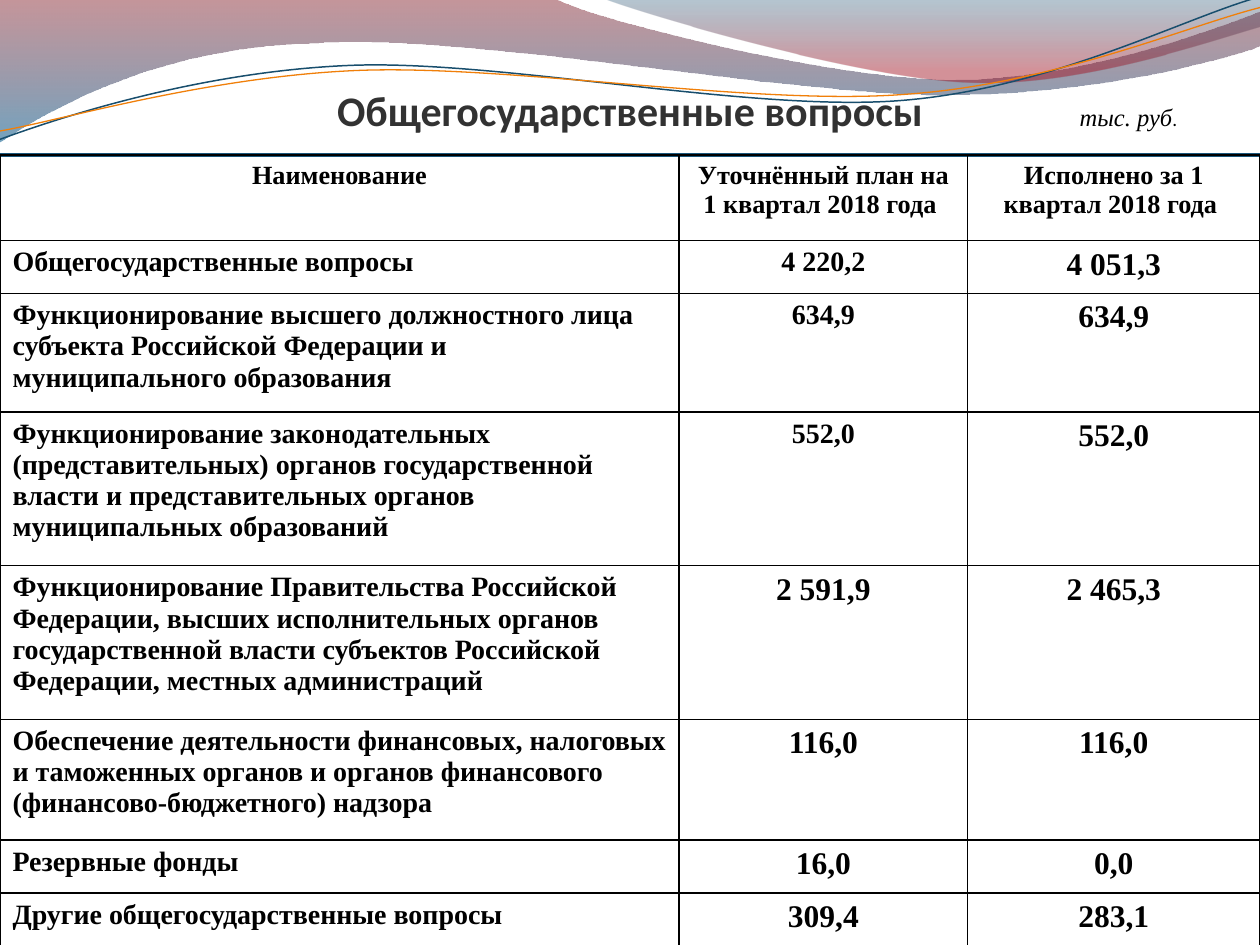
from lxml import etree
from pptx import Presentation
from pptx.dml.color import RGBColor
from pptx.enum.shapes import MSO_CONNECTOR
from pptx.enum.text import MSO_ANCHOR, PP_ALIGN
from pptx.oxml.ns import qn
from pptx.util import Inches, Pt

LEFT, CENTER = PP_ALIGN.LEFT, PP_ALIGN.CENTER
BOTTOM = MSO_ANCHOR.BOTTOM
STRAIGHT = MSO_CONNECTOR.STRAIGHT
TITLE_ONLY = 5

COLORS = {
    "text": "000000", "title": "323232", "red": "7E1621", "blue": "005689",
    "navy": "094467", "crimson": "A10F1F", "wave": "184E6D",
    "orange": "F07F09", "rule": "1B587C",
}

ROWS = [
    ("Наименование", "Уточнённый план на 1 квартал 2018 года ",
     "Исполнено за 1 квартал 2018 года "),
    ("Общегосударственные вопросы", "4 220,2", "4 051,3"),
    ("Функционирование высшего должностного лица субъекта Российской "
     "Федерации и муниципального образования", "634,9", "634,9"),
    ("Функционирование законодательных (представительных) органов "
     "государственной власти и представительных органов муниципальных "
     "образований", "552,0", "552,0"),
    ("Функционирование Правительства Российской Федерации, высших "
     "исполнительных органов государственной власти субъектов Российской "
     "Федерации, местных администраций", "2 591,9", "2 465,3"),
    ("Обеспечение деятельности финансовых, налоговых и таможенных органов "
     "и органов финансового (финансово-бюджетного) надзора",
     "116,0", "116,0"),
    ("Резервные фонды", "16,0", "0,0"),
    ("Другие общегосударственные вопросы", "309,4", "283,1"),
]
WIDTHS = [5.39, 2.29, 2.32]
HEIGHTS = [0.68, 0.42, 0.94, 1.22, 1.22, 0.96, 0.42, 0.42]


def rgb(name):
    return RGBColor.from_string(COLORS[name])


def add(parent, tag, **attrs):
    return etree.SubElement(parent, qn(tag), attrs)


class Deck:
    serif, sans = "Times New Roman", "Calibri"

    def __init__(self):
        self.prs = Presentation()
        self.prs.slide_width, self.prs.slide_height = Inches(10), Inches(7.5)
        self.slide = self.prs.slides.add_slide(
            self.prs.slide_layouts[TITLE_ONLY])
        self.shapes = self.slide.shapes

    def style(self, run, size, font, color="text", bold=False, italic=False):
        run.font.size, run.font.name = Pt(size), font
        run.font.bold, run.font.italic = bold, italic
        run.font.color.rgb = rgb(color)

    def outline(self, steps, close):
        """Draw a start, then lines (2 numbers) and Bezier curves (6)."""
        nodes = [(Inches(step[i]), Inches(step[i + 1]))
                 for step in steps for i in range(0, len(step), 2)]
        pen = self.shapes.build_freeform(*nodes[0])
        pen.add_line_segments(nodes[1:], close=close)
        shape = pen.convert_to_shape()
        shape.shadow.inherit = False
        # Join each run of three nodes into one curve
        lines = iter(list(shape.element.spPr.iter(qn("a:lnTo"))))
        for step in steps[1:]:
            first = next(lines)
            if len(step) == 6:
                curve = etree.Element(qn("a:cubicBezTo"))
                first.addprevious(curve)
                for line in (first, next(lines), next(lines)):
                    curve.append(line[0])
                    line.getparent().remove(line)
        return shape

    def band(self, steps, stops):
        shape = self.outline(steps, True)
        shape.line.fill.background()
        shape.fill.gradient()
        shape.fill.gradient_angle = 270
        for stop, (place, color, _) in zip(shape.fill.gradient_stops, stops):
            stop.position, stop.color.rgb = place, rgb(color)
        marks = shape.element.spPr.iter(qn("a:srgbClr"))
        for mark, (_, _, alpha) in zip(marks, stops):
            add(mark, "a:alpha", val=str(alpha * 1000))

    def wave(self, steps, color, width):
        shape = self.outline(steps, False)
        shape.fill.background()
        shape.line.color.rgb, shape.line.width = rgb(color), Pt(width)

    def rule(self, top):
        line = self.shapes.add_connector(
            STRAIGHT, Inches(10), Inches(top), 0, Inches(top))
        line.line.color.rgb, line.line.width = rgb("rule"), Pt(2)
        add(line.element.spPr, "a:effectLst")

    def border(self, cell):
        props = cell._tc.get_or_add_tcPr()
        for side in ("a:lnL", "a:lnR", "a:lnT", "a:lnB"):
            edge = add(props, side, w=str(Pt(1)))
            add(add(edge, "a:solidFill"), "a:srgbClr", val=COLORS["text"])

    def table(self, top, rows):
        table = self.shapes.add_table(
            len(rows), len(WIDTHS), 0, Inches(top),
            Inches(sum(WIDTHS)), Inches(sum(HEIGHTS))).table
        table.first_row = table.horz_banding = False
        for col, width in zip(table.columns, WIDTHS):
            col.width = Inches(width)
        for r, texts in enumerate(rows):
            table.rows[r].height = Inches(HEIGHTS[r])
            for c, text in enumerate(texts):
                cell = table.cell(r, c)
                self.border(cell)
                cell.fill.background()
                para = cell.text_frame.paragraphs[0]
                para.text = text
                para.alignment = CENTER if r == 0 or c else LEFT
                if r == 0:
                    size = 15
                else:
                    size = 16 if c == 0 or (c == 1 and r < 4) else 18
                self.style(para.runs[0], size, self.serif, bold=True)

    def unit(self, text, left, top, width, height):
        frame = self.shapes.add_textbox(
            *map(Inches, (left, top, width, height))).text_frame
        frame.word_wrap = True
        para = frame.paragraphs[0]
        para.text = text
        self.style(para.runs[0], 14, self.serif, italic=True)
        dot = para.add_run()
        dot.text = "."
        self.style(dot, 11, self.sans)

    def title(self, text, left, top, width, height):
        title = self.shapes.title
        title.left, title.top = Inches(left), Inches(top)
        title.width, title.height = Inches(width), Inches(height)
        frame = title.text_frame
        frame.text = text
        frame.vertical_anchor, frame.word_wrap = BOTTOM, True
        frame.margin_left = frame.margin_right = frame.margin_bottom = 0
        frame.margin_top = Inches(0.05)
        para = frame.paragraphs[0]
        para.alignment = CENTER
        self.style(para.runs[0], 24, self.sans, "title", bold=True)
        title.element.getparent().append(title.element)  # bring to front


def main():
    deck = Deck()

    # Header bands
    deck.band([(0, 0), (4.4, -0.01), (4.76, 0.17, 6.64, 0.63, 7.58, 0.63),
               (8.53, 0.63, 9.58, 0.26, 10, 0.09), (10.01, 0.36),
               (9.83, 0.44, 8.7, 0.76, 7.46, 0.75),
               (6.22, 0.75, 3.82, 0.28, 2.57, 0.34),
               (1.29, 0.36, 0.46, 0.83, -0.01, 1.13)],
              [(0, "red", 45), (1, "blue", 55)])
    deck.band([(4.79, -0.01), (5.09, 0.11, 6.82, 0.62, 7.69, 0.65),
               (8.56, 0.69, 9.61, 0.32, 10, 0.21), (10, 0)],
              [(0, "navy", 30), (0.8, "crimson", 45)])

    # Thin waves
    deck.wave([(-0.01, 1.11), (0.48, 0.93, 1.58, 0.57, 2.77, 0.52),
               (3.95, 0.47, 5.93, 0.89, 7.13, 0.8),
               (8.33, 0.71, 9.38, 0.15, 9.98, -0.02)], "wave", 0.85)
    deck.wave([(0, 1.04), (0.47, 0.96, 1.64, 0.61, 2.83, 0.56),
               (4.03, 0.51, 5.97, 0.84, 7.17, 0.75),
               (8.36, 0.67, 9.41, 0.21, 10, 0.06)], "orange", 0.75)

    # Rule, table and headings
    deck.rule(1.23)
    deck.table(1.23, ROWS)
    deck.unit("тыс. руб", 8.47, 0.76, 1.42, 0.39)
    deck.title("Общегосударственные вопросы", 0, 0.2, 10, 0.87)

    deck.prs.save("out.pptx")


if __name__ == "__main__":
    main()
